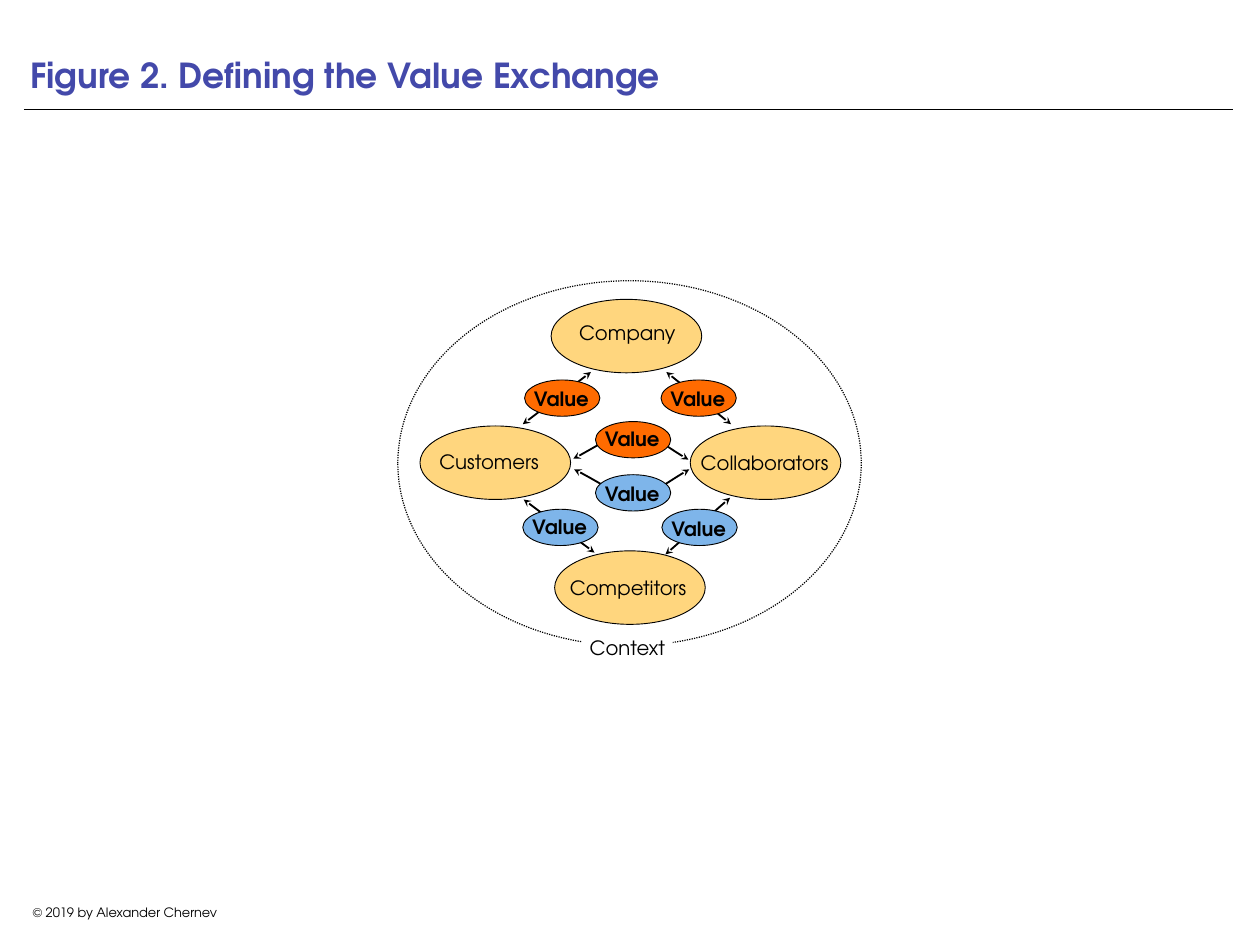
from lxml import etree
from pptx import Presentation
from pptx import util as u
from pptx.dml.color import RGBColor
from pptx.enum import dml, shapes, text
from pptx.oxml.ns import qn

FONT = "TeX Gyre Adventor"
BLACK, WHITE, TITLE = "000000", "FFFFFF", "4349AA"
ACTOR, ORANGE, BLUE = "FFD67E", "FF6B00", "7EB5EA"
MIDDLE, BOTTOM, TOP = (text.MSO_ANCHOR.MIDDLE, text.MSO_ANCHOR.BOTTOM,
                       text.MSO_ANCHOR.TOP)


def color(value):
    return RGBColor.from_string(value)


def add_text(s, x, y, w, h, words, size=16, fill=BLACK, bold=False,
             anchor=MIDDLE, align=text.PP_ALIGN.CENTER, spacing=1.0, inset=0):
    sp = s.shapes.add_textbox(*map(u.Inches, (x, y, w, h)))
    tf = sp.text_frame
    tf.word_wrap = True
    tf.vertical_anchor = anchor
    tf.margin_left = tf.margin_right = u.Inches(inset)
    tf.margin_top = tf.margin_bottom = u.Inches(inset)
    p = tf.paragraphs[0]
    p.text = words
    p.alignment = align
    p.line_spacing = spacing
    p.font.name = FONT
    p.font.size = u.Pt(size)
    p.font.bold = bold
    p.font.color.rgb = color(fill)
    return sp


def add_ellipse(s, x, y, w, h, fill=None, width=0.75):
    sp = s.shapes.add_shape(shapes.MSO_SHAPE.OVAL, *map(u.Inches, (x, y, w, h)))
    sp.shadow.inherit = False
    if fill:
        sp.fill.solid()
        sp.fill.fore_color.rgb = color(fill)
    else:
        sp.fill.background()
    sp.line.color.rgb = color(BLACK)
    sp.line.width = u.Pt(width)
    return sp


def add_line(s, x1, y1, x2, y2, width):
    sp = s.shapes.add_connector(shapes.MSO_CONNECTOR.STRAIGHT,
                                *map(u.Inches, (x1, y1, x2, y2)))
    etree.SubElement(sp._element.spPr, qn("a:effectLst"))
    sp.line.color.rgb = color(BLACK)
    sp.line.width = u.Pt(width)
    return sp


def add_arrowheads(sp):
    ln = sp.line._get_or_add_ln()
    for end in ("a:headEnd", "a:tailEnd"):
        etree.SubElement(ln, qn(end), type="stealth")


def bezier(a, b, c, d, steps=8):
    for i in range(1, steps + 1):
        t = i / steps
        yield tuple((1 - t) ** 3 * a[k] + 3 * (1 - t) ** 2 * t * b[k]
                    + 3 * (1 - t) * t ** 2 * c[k] + t ** 3 * d[k] for k in (0, 1))


def add_arc(s, x, y, points):
    points = [(u.Inches(x + dx), u.Inches(y + dy)) for dx, dy in points]
    curve = [*bezier(*points[:4]), *bezier(*points[3:])]
    fb = s.shapes.build_freeform(*points[0])
    fb.add_line_segments(curve, close=False)
    sp = fb.convert_to_shape()
    sp.shadow.inherit = False
    sp.fill.background()
    sp.line.color.rgb = color(BLACK)
    sp.line.width = u.Pt(1.5)
    add_arrowheads(sp)


def add_header(s, x, y, w, h):
    add_line(s, x, y + h + 0.09, x + w, y + h + 0.09, 0.5)
    add_text(s, x, y, w, h, "Figure 2. Defining the Value Exchange", 28, TITLE,
             True, BOTTOM, text.PP_ALIGN.LEFT, inset=0.07)


def add_context(s, x, y, w, h):
    add_ellipse(s, x, y, w, h, width=1).line.dash_style = dml.MSO_LINE.ROUND_DOT
    label = add_text(s, x + 2.08, y + h - 0.18, 1.02, 0.41, "Context")
    label.fill.solid()
    label.fill.fore_color.rgb = color(WHITE)


def add_actor(s, x, y, name, dx, dy, w, h, anchor=MIDDLE):
    add_ellipse(s, x, y, 1.7, 0.83, ACTOR)
    add_text(s, x + dx, y + dy, w, h, name, anchor=anchor, spacing=0.9)


def add_value(s, x, y, fill, dy):
    add_ellipse(s, x, y, 0.85, 0.41, fill)
    add_text(s, x + 0.04, y + dy, 0.75, 0.28, "Value", bold=True,
             anchor=BOTTOM, spacing=0.8)


def add_exchange(s, x, y, w, h):
    add_context(s, x, y, w, h)
    for dx, dy, *label in (
            (3.3, 1.64, "Collaborators", 0.06, 0.21, 1.56, 0.45),
            (0.25, 1.64, "Customers", 0, 0.21, 1.56, 0.41),
            (1.73, 0.21, "Company", 0.03, 0.27, 1.66, 0.43, TOP),
            (1.77, 3.05, "Competitors", 0.11, 0.22, 1.44, 0.43)):
        add_actor(s, x + dx, y + dy, *label)
    for x1, y1, x2, y2 in ((3.03, 1.03, 3.76, 1.62), (1.41, 1.62, 2.18, 1.03),
                           (2.22, 3.07, 1.42, 2.47), (3.75, 2.45, 3.02, 3.09)):
        add_arrowheads(add_line(s, x + x1, y + y1, x + x2, y + y2, 1.5))
    add_arc(s, x, y, [(1.98, 2.01), (2.2, 1.9), (2.52, 1.68), (2.67, 1.68),
                      (2.81, 1.69), (3.08, 1.91), (3.28, 2.02)])
    add_arc(s, x, y, [(1.99, 2.13), (2.22, 2.24), (2.53, 2.46), (2.68, 2.46),
                      (2.82, 2.45), (3.09, 2.24), (3.29, 2.13)])
    for dx, dy, fill, drop in (
            (2.97, 1.12, ORANGE, 0.06), (1.43, 1.12, ORANGE, 0.06),
            (2.23, 1.59, ORANGE, 0.05), (2.23, 2.19, BLUE, 0.07),
            (1.41, 2.58, BLUE, 0.05), (2.98, 2.58, BLUE, 0.07)):
        add_value(s, x + dx, y + dy, fill, drop)


def add_footer(s, x, y, w, h):
    add_text(s, x, y, w, h, "© 2019 by Alexander Chernev", 10.5)


def main():
    prs = Presentation()
    prs.slide_width, prs.slide_height = u.Inches(14.22), u.Inches(10.67)
    s = prs.slides.add_slide(prs.slide_layouts[6])
    add_footer(s, 0.24, 10.16, 2.34, 0.28)
    add_header(s, 0.27, 0, 13.64, 1.15)
    add_exchange(s, 4.49, 3.17, 5.23, 4.12)
    prs.save("out.pptx")


if __name__ == "__main__":
    main()
